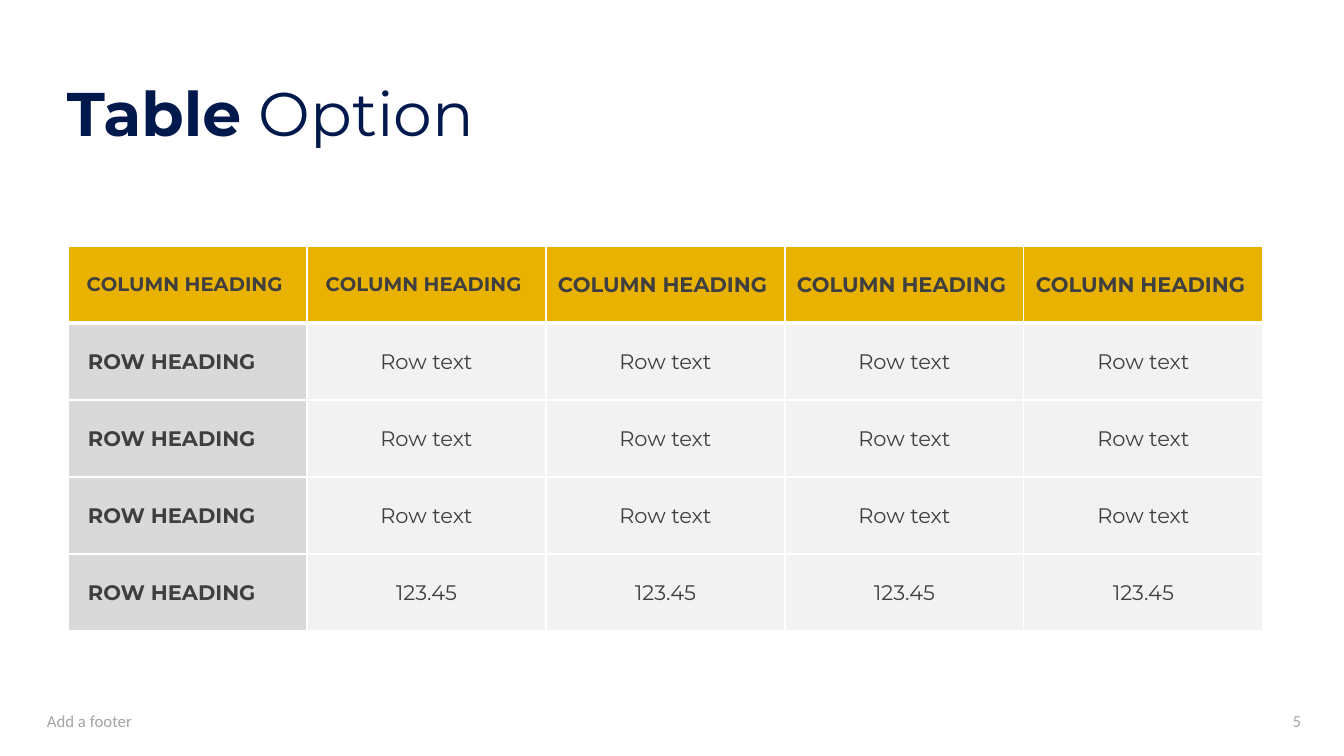
from lxml import etree
from pptx import Presentation
from pptx.dml.color import RGBColor
from pptx.enum.text import MSO_ANCHOR, PP_ALIGN
from pptx.oxml.ns import qn
from pptx.util import Pt

EMU_PER_PX = 914400 / 100.8
LEFT, CENTER, RIGHT = PP_ALIGN.LEFT, PP_ALIGN.CENTER, PP_ALIGN.RIGHT
MIDDLE, BOTTOM = MSO_ANCHOR.MIDDLE, MSO_ANCHOR.BOTTOM

NAVY = RGBColor(0x00, 0x19, 0x4C)
GOLD = RGBColor(0xEA, 0xB2, 0x00)
CHARCOAL = RGBColor(0x3F, 0x3F, 0x3F)
FOOTER_GREY = RGBColor(0xA5, 0xA5, 0xA5)
ROW_HEAD_GREY = RGBColor(0xD9, 0xD9, 0xD9)
CELL_GREY = RGBColor(0xF2, 0xF2, 0xF2)
WHITE = RGBColor(0xFF, 0xFF, 0xFF)

COLUMN_COUNT = 5
COLUMN_WIDTH, ROW_HEIGHT = 239, 77
HEADING_SIZES = [14, 14, 15, 15, 15]
ROW_TEXTS = ["Row text", "Row text", "Row text", "123.45"]


def px(length):
    return round(length * EMU_PER_PX)


def set_attributes(target, values):
    for name, value in values.items():
        setattr(target, name, value)


def add_run(paragraph, text, size, color, bold=False, name="Montserrat"):
    run = paragraph.add_run()
    run.text = text
    set_attributes(run.font, {"name": name, "size": Pt(size), "bold": bold})
    run.font.color.rgb = color


def add_title(slide):
    title = slide.shapes.title
    set_attributes(title, {"left": px(57), "top": px(23),
                           "width": px(918), "height": px(127)})
    set_attributes(title.text_frame, {"vertical_anchor": BOTTOM, "word_wrap": True,
                                      "margin_left": px(10), "margin_right": px(10),
                                      "margin_top": px(5), "margin_bottom": 0})
    paragraph = title.text_frame.paragraphs[0]
    set_attributes(paragraph, {"alignment": LEFT, "line_spacing": 0.9})
    add_run(paragraph, "Table ", 44, NAVY, bold=True)
    add_run(paragraph, "Option", 44, NAVY)


def add_footer_text(slide, text, left, width, alignment):
    box = slide.shapes.add_textbox(px(left), px(701), px(width), px(40))
    set_attributes(box.text_frame, {"word_wrap": True, "vertical_anchor": MIDDLE})
    paragraph = box.text_frame.paragraphs[0]
    paragraph.alignment = alignment
    add_run(paragraph, text, 12, FOOTER_GREY, name="Calibri")


def add_borders(cell, widths):
    """Draw white borders; widths maps an edge tag to its points."""
    properties = cell._tc.get_or_add_tcPr()
    for edge, width in widths.items():
        line = etree.SubElement(properties, qn(f"a:{edge}"), w=str(Pt(width)))
        fill = etree.SubElement(line, qn("a:solidFill"))
        etree.SubElement(fill, qn("a:srgbClr"), val=str(WHITE))


def fill_cell(cell, text, fill, size=15, bold=False, alignment=CENTER,
              indent=10, top_border=1, bottom_border=1):
    add_borders(cell, {"lnL": 1, "lnR": 1, "lnT": top_border, "lnB": bottom_border})
    cell.fill.solid()
    cell.fill.fore_color.rgb = fill
    set_attributes(cell, {"vertical_anchor": MIDDLE,
                          "margin_left": px(indent), "margin_right": px(10),
                          "margin_top": px(5), "margin_bottom": px(5)})
    paragraph = cell.text_frame.paragraphs[0]
    paragraph.alignment = alignment
    add_run(paragraph, text, size, CHARCOAL, bold)


def add_option_table(slide):
    row_count = len(ROW_TEXTS) + 1
    table = slide.shapes.add_table(
        row_count, COLUMN_COUNT, px(68), px(246),
        px(COLUMN_WIDTH * COLUMN_COUNT), px(ROW_HEIGHT * row_count)).table
    for column in table.columns:
        column.width = px(COLUMN_WIDTH)
    for row in table.rows:
        row.height = px(ROW_HEIGHT)

    for column, size in enumerate(HEADING_SIZES):
        fill_cell(table.cell(0, column), "COLUMN HEADING ", GOLD, size,
                  bold=True, bottom_border=3)
    for row, text in enumerate(ROW_TEXTS, start=1):
        top_border = 3 if row == 1 else 1
        fill_cell(table.cell(row, 0), "ROW HEADING", ROW_HEAD_GREY, bold=True,
                  alignment=LEFT, indent=20, top_border=top_border)
        for column in range(1, COLUMN_COUNT):
            fill_cell(table.cell(row, column), text, CELL_GREY, top_border=top_border)


def main():
    presentation = Presentation()
    set_attributes(presentation, {"slide_width": px(1344), "slide_height": px(756)})
    title_only = presentation.slide_layouts[5]
    slide = presentation.slides.add_slide(title_only)
    add_title(slide)
    add_option_table(slide)
    add_footer_text(slide, "Add a footer", 37, 454, LEFT)
    add_footer_text(slide, "5", 1229, 82, RIGHT)
    presentation.save("out.pptx")


if __name__ == "__main__":
    main()
